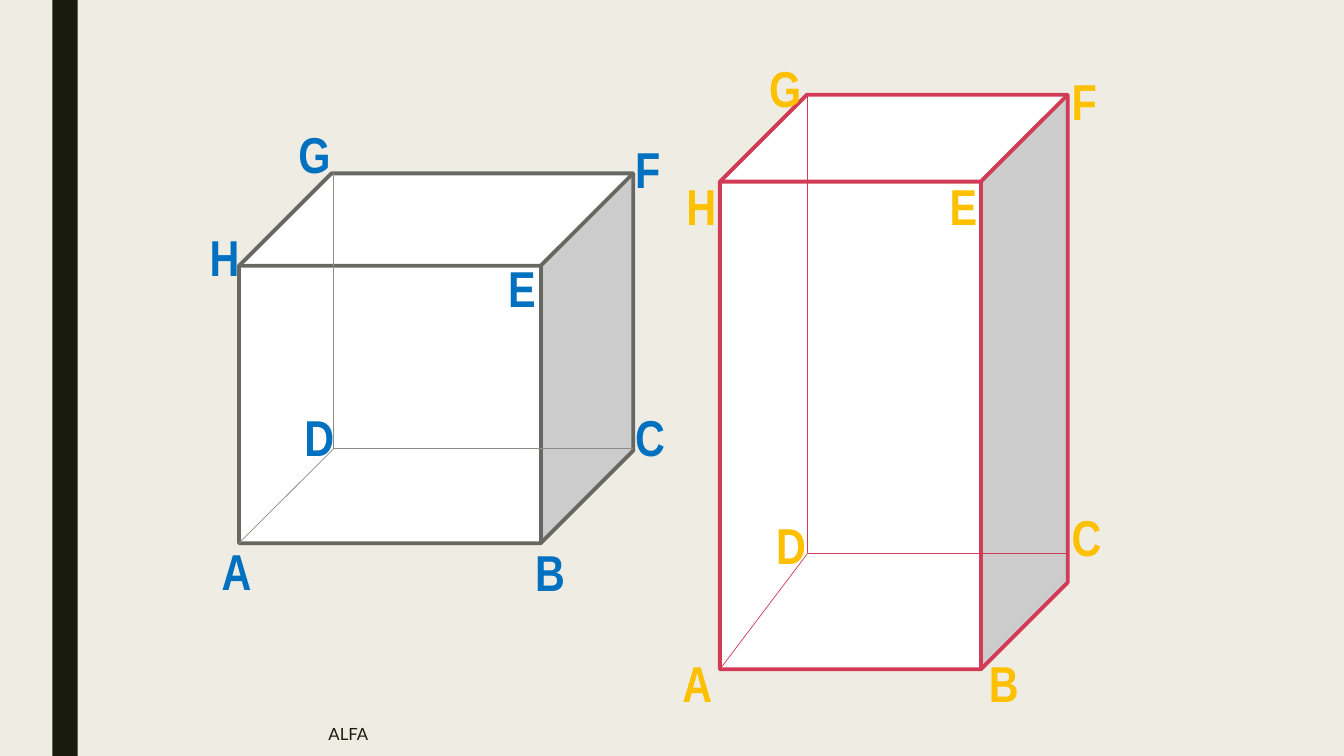
import pptx
import pptx.util
import pptx.dml.color
import pptx.enum.shapes
import pptx.enum.text
import pptx.oxml.ns
from lxml import etree

RGBColor = pptx.dml.color.RGBColor
BACKGROUND = RGBColor(0xEF, 0xED, 0xE3)
DARK = RGBColor(0x19, 0x1B, 0x0E)
WHITE = RGBColor(0xFF, 0xFF, 0xFF)
GREY = RGBColor(0x68, 0x68, 0x63)
LIGHT_GREY = RGBColor(0x8C, 0x8D, 0x86)
RED = RGBColor(0xD1, 0x3B, 0x56)
BLUE = RGBColor(0x00, 0x70, 0xC0)
YELLOW = RGBColor(0xFF, 0xC0, 0x00)

PX = 9144  # EMU, 100 px to the inch
LABEL_HEIGHT = 71
LABEL_WIDTHS = {"E": 48, "F": 45, "G": 52}
LABEL_WIDTH = 50

CUBE_LABELS = {
    "A": (210, 531), "B": (521, 532), "C": (620, 398), "D": (292, 398),
    "E": (494, 250), "F": (620, 132), "G": (286, 117), "H": (198, 219),
}
PRISM_LABELS = {
    "A": (667, 642), "B": (971, 642), "C": (1053, 497), "D": (760, 505),
    "E": (932, 169), "F": (1053, 65), "G": (753, 52), "H": (671, 169),
}


def px(*lengths):
    return [pptx.util.Emu(n * PX) for n in lengths]


def add_shape(slide, kind, box, fill, line=None):
    sp = slide.shapes.add_shape(kind, *px(*box))
    sp.shadow.inherit = False
    sp.fill.solid()
    sp.fill.fore_color.rgb = fill
    if line is None:
        sp.line.fill.background()
    else:
        sp.line.color.rgb = line
        sp.line.width = pptx.util.Pt(2.75)
    return sp


def add_line(slide, start, end, color):
    cn = slide.shapes.add_connector(
        pptx.enum.shapes.MSO_CONNECTOR.STRAIGHT, *px(*start, *end))
    cn.line.color.rgb = color
    cn.line.width = pptx.util.Pt(0.5)
    etree.SubElement(cn._element.spPr, pptx.oxml.ns.qn("a:effectLst"))


def add_text(slide, box, text, font, size, color, bold=False, wrap=False):
    tf = slide.shapes.add_textbox(*px(*box)).text_frame
    tf.word_wrap = wrap
    r = tf.paragraphs[0].add_run()
    r.text = text
    r.font.name = font
    r.font.size = pptx.util.Pt(size)
    r.font.bold = bold
    r.font.color.rgb = color
    return tf


def add_solid(slide, box, corner_d, edge, hidden_edge):
    """Draw a cuboid and the three hidden edges that meet in corner D."""
    left, top, width, height = box
    add_shape(slide, pptx.enum.shapes.MSO_SHAPE.CUBE, box, WHITE, edge)
    x, y = corner_d
    for end in ((x, top), (left, top + height), (left + width, y)):
        add_line(slide, corner_d, end, hidden_edge)


def add_labels(slide, labels, color):
    for letter, (left, top) in labels.items():
        box = (left, top, LABEL_WIDTHS.get(letter, LABEL_WIDTH), LABEL_HEIGHT)
        tf = add_text(slide, box, letter, "Arial Narrow", 36, color, bold=True)
        tf.auto_size = pptx.enum.text.MSO_AUTO_SIZE.SHAPE_TO_FIT_TEXT


def main():
    prs = pptx.Presentation()
    prs.slide_width, prs.slide_height = px(1333, 750)
    slide = prs.slides.add_slide(prs.slide_layouts[6])
    slide.background.fill.solid()
    slide.background.fill.fore_color.rgb = BACKGROUND

    add_shape(slide, pptx.enum.shapes.MSO_SHAPE.RECTANGLE,
              (52, 0, 25, 750), DARK)
    add_solid(slide, (237, 172, 391, 367), (331, 445), GREY, LIGHT_GREY)
    add_labels(slide, CUBE_LABELS, BLUE)
    add_solid(slide, (714, 94, 345, 570), (801, 549), RED, RED)
    add_labels(slide, PRISM_LABELS, YELLOW)

    footer = add_text(slide, (316, 706, 687, 44), "ALFA", "Lato", 12, DARK,
                      wrap=True)
    footer.vertical_anchor = pptx.enum.text.MSO_ANCHOR.MIDDLE
    prs.save("out.pptx")


if __name__ == "__main__":
    main()
